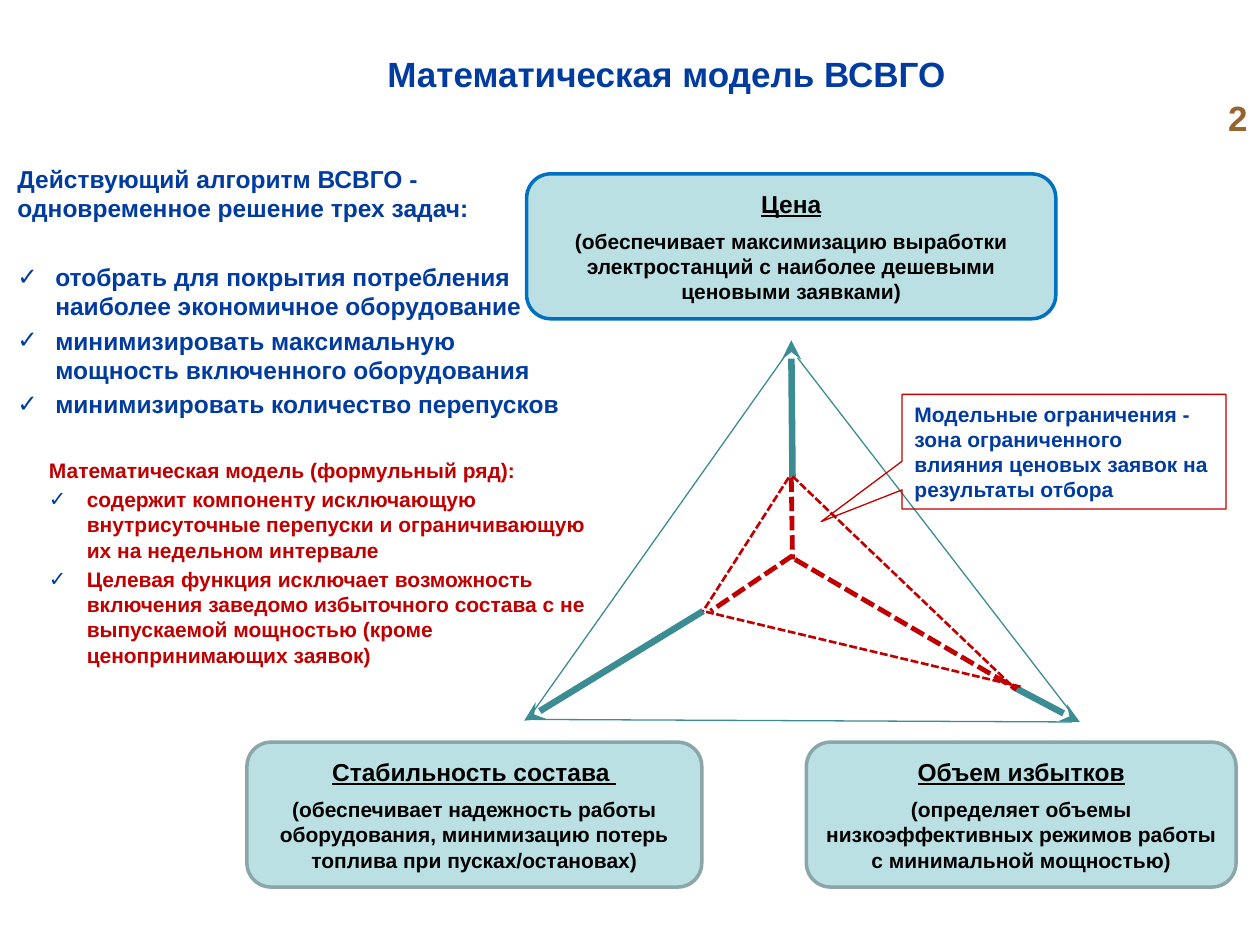
from dataclasses import dataclass

from lxml.etree import SubElement
from pptx import Presentation
from pptx.dml.color import RGBColor
from pptx.enum.dml import MSO_LINE
from pptx.enum.shapes import MSO_CONNECTOR, MSO_SHAPE
from pptx.enum.text import MSO_ANCHOR, PP_ALIGN
from pptx.oxml.ns import qn
from pptx.util import Inches, Pt


@dataclass(frozen=True)
class Theme:
    font: str = "Arial"
    blue: str = "003CA0"
    brown: str = "95642F"
    red: str = "C00000"
    teal: str = "3C8C93"
    pale: str = "BBE0E3"
    edge: str = "8AA6A8"
    sky: str = "0070C0"
    black: str = "000000"
    title: int = 20
    head: int = 14
    body: int = 12


T = Theme()


def rgb(code):
    return RGBColor.from_string(code)


def apply(item, **values):
    for name, value in values.items():
        setattr(item, name, value)


# Text
def write(para, text, size, color, gap=0, align=PP_ALIGN.LEFT, under=False):
    apply(para, alignment=align, space_before=Pt(gap))
    for i, part in enumerate(text.split("\n")):
        if i:
            para.add_line_break()
        run = para.add_run()
        run.text = part
        apply(run.font, name=T.font, size=Pt(size), bold=True, underline=under)
        run.font.color.rgb = rgb(color)


def add_check(para):
    props = para._p.get_or_add_pPr()
    indent = {"marL": Inches(0.3), "indent": Inches(-0.3)}
    for name, value in indent.items():
        props.set(name, str(int(value)))
    tint = SubElement(props, qn("a:buClr"))
    SubElement(tint, qn("a:srgbClr"), val=T.blue)
    SubElement(props, qn("a:buFont"), typeface=T.font)
    SubElement(props, qn("a:buChar"), char="✓")


def add_text(slide, place, anchor=MSO_ANCHOR.TOP):
    frame = slide.shapes.add_textbox(*map(Inches, place)).text_frame
    apply(frame, word_wrap=True, vertical_anchor=anchor)
    return frame


def add_list(slide, place, head, items, size, color, first, gap):
    frame = add_text(slide, place)
    write(frame.paragraphs[0], head, size, color)
    for i, item in enumerate(items):
        para = frame.add_paragraph()
        add_check(para)
        write(para, item, size, color, gap if i else first)


# Shapes
def add_box(slide, kind, place, edge, width, fill=None):
    box = slide.shapes.add_shape(kind, *map(Inches, place))
    box.shadow.inherit = False
    if fill:
        box.fill.solid()
        box.fill.fore_color.rgb = rgb(fill)
    else:
        box.fill.background()
    box.line.color.rgb = rgb(edge)
    box.line.width = Pt(width)
    apply(box.text_frame, word_wrap=True, vertical_anchor=MSO_ANCHOR.MIDDLE)
    return box


def add_goal(slide, place, edge, head, note):
    box = add_box(slide, MSO_SHAPE.ROUNDED_RECTANGLE, place, edge, 2, T.pale)
    frame = box.text_frame
    mid = PP_ALIGN.CENTER
    write(frame.paragraphs[0], head, T.head, T.black, align=mid, under=True)
    write(frame.add_paragraph(), note, T.body, T.black, 6, mid)


def add_line(slide, ends, color, width, dash=None, arrow=False):
    line = slide.shapes.add_connector(MSO_CONNECTOR.STRAIGHT, *map(Inches, ends))
    line.line.color.rgb = rgb(color)
    apply(line.line, width=Pt(width), dash_style=dash)
    if arrow:
        SubElement(line.line._get_or_add_ln(), qn("a:tailEnd"), type="stealth")
    SubElement(line._element.spPr, qn("a:effectLst"))


def add_chart_lines(slide):
    # Outer triangle
    for ends in ((6.22, 2.84, 4.21, 5.68), (8.52, 5.68, 6.33, 2.84),
                 (8.51, 5.73, 4.24, 5.71)):
        add_line(slide, ends, T.teal, 0.75)
    # Axes
    for ends in ((8.04, 5.45, 8.57, 5.73), (6.29, 3.79, 6.28, 2.7),
                 (5.58, 4.85, 4.16, 5.72)):
        add_line(slide, ends, T.teal, 3.75, arrow=True)
    # Limit zone: sides, then spokes
    zone = {
        1.5: ((6.26, 3.79, 5.58, 4.85), (6.29, 3.78, 8.04, 5.45),
              (8.1, 5.45, 5.58, 4.85)),
        2.75: ((6.28, 3.79, 6.29, 4.44), (6.29, 4.41, 5.64, 4.85),
               (6.31, 4.44, 8.07, 5.47)),
    }
    for width, group in zone.items():
        for ends in group:
            add_line(slide, ends, T.red, width, MSO_LINE.SQUARE_DOT)


def main():
    deck = Presentation()
    apply(deck, slide_width=Inches(10), slide_height=Inches(7.5))
    slide = deck.slides.add_slide(deck.slide_layouts[6])

    # Title and page number
    frame = add_text(slide, (1.22, 0, 8.14, 1.16), MSO_ANCHOR.MIDDLE)
    write(frame.paragraphs[0], "Математическая модель ВСВГО", T.title, T.blue,
          align=PP_ALIGN.CENTER)
    frame = add_text(slide, (9.37, 0.6, 0.63, 0.55), MSO_ANCHOR.BOTTOM)
    write(frame.paragraphs[0], "2", T.title, T.brown, align=PP_ALIGN.RIGHT)

    # Goals at the corners
    add_goal(slide, (4.18, 1.38, 4.2, 1.15), T.sky, "Цена",
             "(обеспечивает максимизацию выработки электростанций "
             "с наиболее дешевыми ценовыми заявками)")
    add_goal(slide, (1.96, 5.89, 3.61, 1.15), T.edge, "Стабильность состава ",
             "(обеспечивает надежность работы оборудования, "
             "минимизацию потерь топлива при пусках/остановах)")
    add_goal(slide, (6.4, 5.89, 3.41, 1.15), T.edge, "Объем избытков",
             "(определяет объемы низкоэффективных режимов работы "
             "с минимальной мощностью)")

    add_chart_lines(slide)

    # Lists on the left
    add_list(slide, (0.04, 1.25, 4.55, 2.53),
             "Действующий алгоритм ВСВГО -\nодновременное решение трех задач:",
             ("отобрать для покрытия потребления наиболее экономичное оборудование",
              "минимизировать максимальную мощность включенного оборудования",
              "минимизировать количество перепусков"),
             T.head, T.blue, 22.5, 2.8)
    add_list(slide, (0.29, 3.58, 4.55, 2.53),
             "Математическая модель (формульный ряд):",
             ("содержит компоненту исключающую внутрисуточные перепуски "
              "и ограничивающую их на недельном интервале",
              "Целевая функция исключает возможность включения заведомо "
              "избыточного состава с не выпускаемой мощностью "
              "(кроме ценопринимающих заявок)"),
             T.body, T.red, 2.4, 2.4)

    # Callout
    call = add_box(slide, MSO_SHAPE.RECTANGULAR_CALLOUT,
                   (7.16, 3.13, 2.57, 0.91), T.red, 0.75)
    call.adjustments[0], call.adjustments[1] = -0.75, 0.61
    write(call.text_frame.paragraphs[0],
          "Модельные ограничения - зона ограниченного влияния "
          "ценовых заявок на результаты отбора", T.body, T.blue)

    deck.save("out.pptx")


if __name__ == "__main__":
    main()
